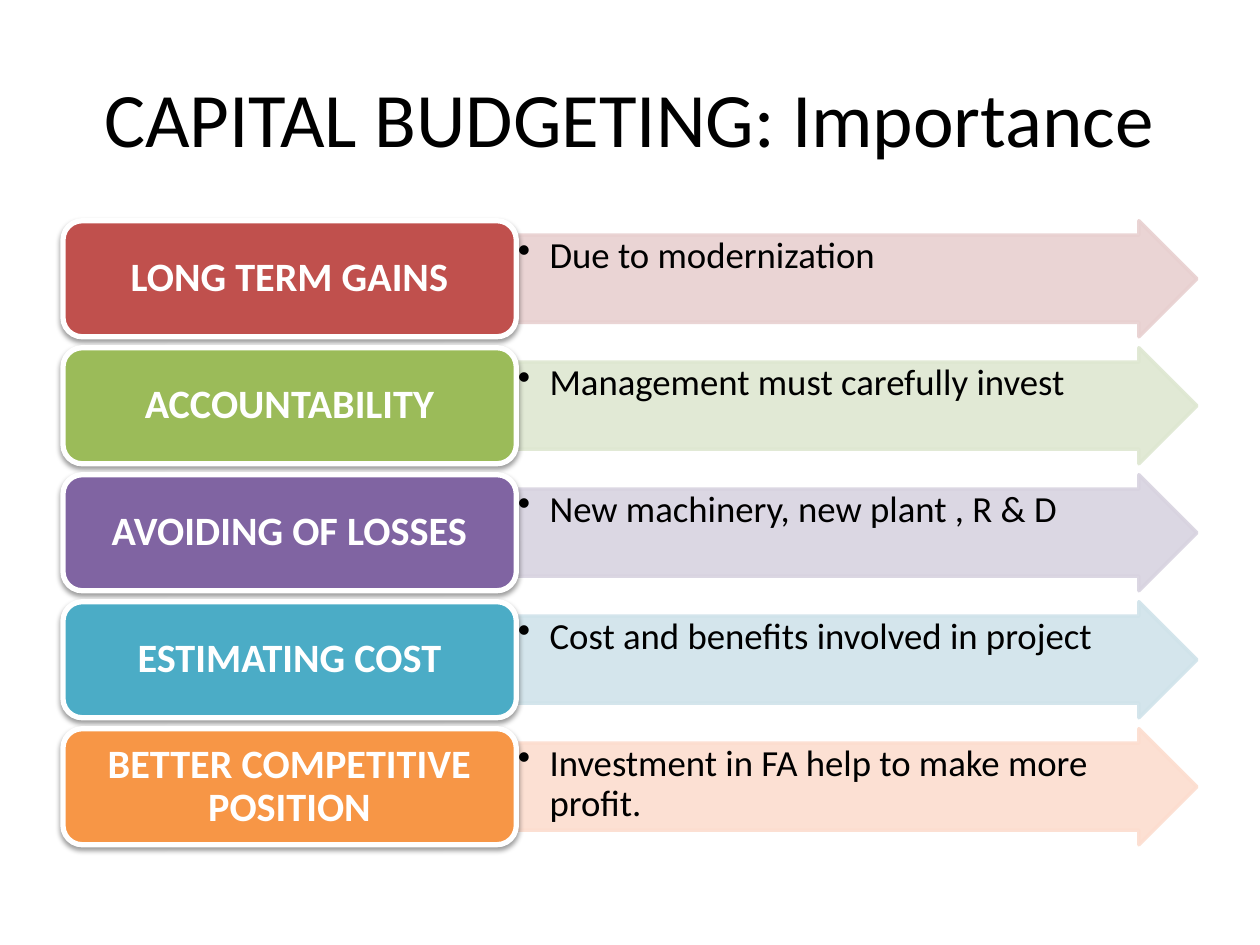
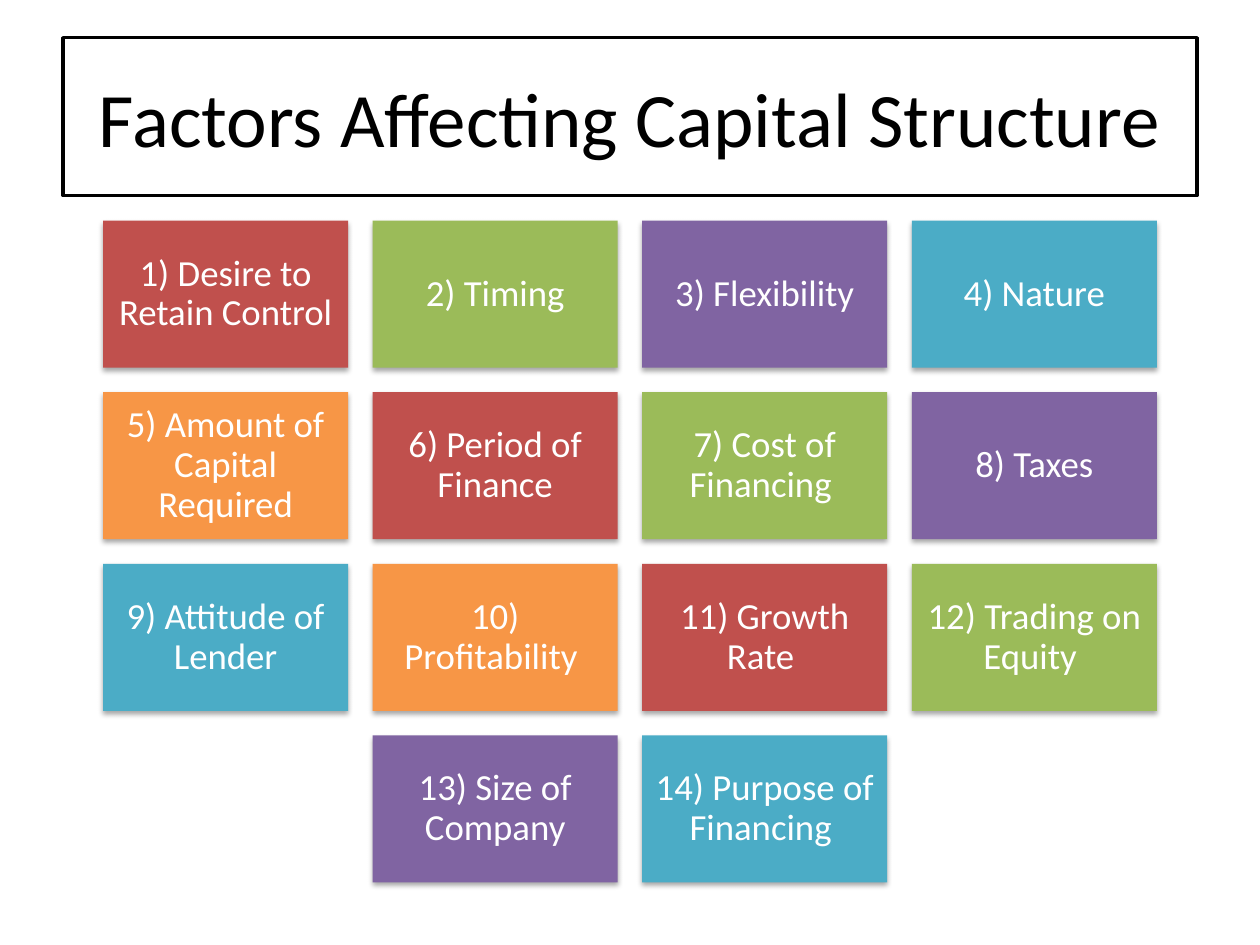
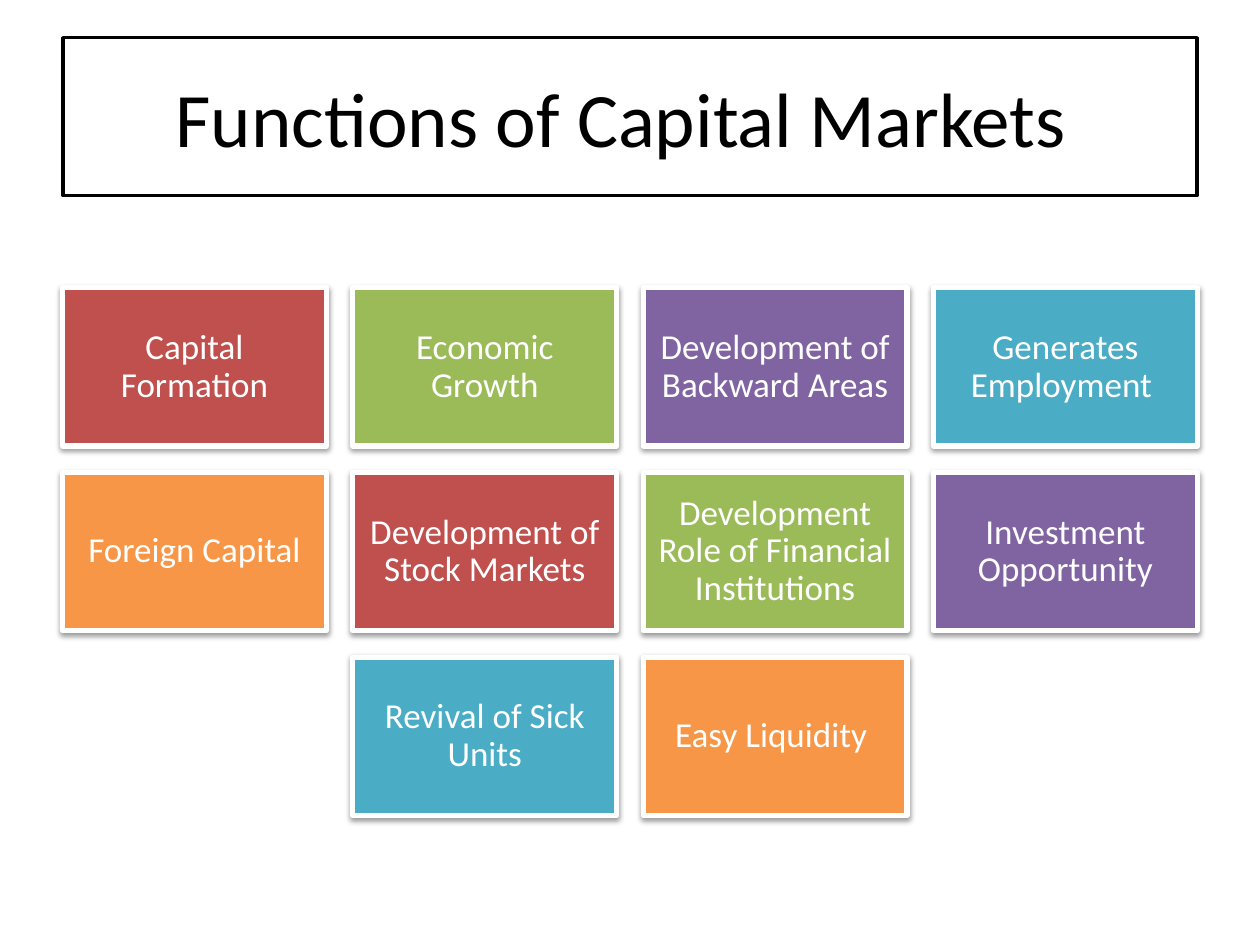
"""Build three slides on capital budgeting, capital structure and capital markets."""
from dataclasses import dataclass
from itertools import cycle

from lxml import etree
from pptx import Presentation
from pptx import util as u
from pptx.dml.color import RGBColor
from pptx.enum import shapes, text
from pptx.oxml import ns


@dataclass(frozen=True)
class Theme:
    font: str = "Calibri"
    ink: str = "000000"
    paper: str = "FFFFFF"
    hues: tuple[str, ...] = ("C0504D", "9BBB59", "8064A2", "4BACC6", "F79646")
    tints: tuple[str, ...] = ("E8D0D0", "DEE7D1", "D8D3E0", "D0E3EA", "FCDDCF")
    title: int = 44
    label: int = 23
    note: int = 21
    edge: int = 3
    frame: int = 2
    tight: float = 0.9
    clear: int = 90


@dataclass(frozen=True)
class Box:
    left: float
    top: float
    wide: float
    high: float

    def sides(self) -> tuple[u.Cm, ...]:
        return tuple(u.Cm(n) for n in (self.left, self.top, self.wide, self.high))


@dataclass(frozen=True)
class Shade:
    alpha: int
    dist: float


@dataclass(frozen=True)
class Grid:
    title: str
    items: tuple[str, ...]
    top: float
    wide: float
    size: int
    pad: float
    edge: bool
    shade: Shade


@dataclass(frozen=True)
class Row:
    label: str
    note: str


THEME = Theme()
PAGE = Box(0, 0, 25.4, 19.05)
HEAD = Box(1.27, 0.76, 22.86, 3.18)
KIND = shapes.MSO_SHAPE
COLS = 4
GAP = 0.1
RATIO = 0.6
DEEP = Shade(38, 1.6)
SOFT = Shade(35, 1.8)

ROWS = (
    Row("LONG TERM GAINS", "Due to modernization"),
    Row("ACCOUNTABILITY", "Management must carefully invest"),
    Row("AVOIDING OF LOSSES", "New machinery, new plant , R & D"),
    Row("ESTIMATING COST", "Cost and benefits involved in project"),
    Row("BETTER COMPETITIVE POSITION", "Investment in FA help to make more profit."),
)
FACTORS = Grid(
    "Factors Affecting Capital Structure",
    (
        "1) Desire to Retain Control", "2) Timing", "3) Flexibility", "4) Nature",
        "5) Amount of Capital Required", "6) Period of Finance",
        "7) Cost of Financing ", "8) Taxes",
        "9) Attitude of Lender", "10) Profitability ", "11) Growth Rate ",
        "12) Trading on Equity ",
        "13) Size of Company", "14) Purpose of Financing ",
    ),
    top=4.45, wide=4.94, size=21, pad=0.22, edge=False, shade=SOFT,
)
MARKETS = Grid(
    "Functions of Capital Markets ",
    (
        "Capital Formation", "Economic Growth", "Development of Backward Areas",
        "Generates Employment ",
        "Foreign Capital", "Development of Stock Markets",
        "Development Role of Financial Institutions", "Investment Opportunity",
        "Revival of Sick Units", "Easy Liquidity ",
    ),
    top=5.8, wide=5.32, size=20, pad=0.2, edge=True, shade=DEEP,
)


def style(para, size: int, hue: str, bold: bool = False) -> None:
    """Set the font of a paragraph."""
    font = para.font
    font.name, font.size, font.bold = THEME.font, u.Pt(size), bold
    font.color.rgb = RGBColor.from_string(hue)


def start(deck, words: str, framed: bool = True):
    """Add a slide with its title, framed or plain."""
    slide = deck.slides.add_slide(deck.slide_layouts[5])
    head = slide.shapes.title
    head.left, head.top, head.width, head.height = HEAD.sides()
    frame = head.text_frame
    frame.text = words
    frame.auto_size = text.MSO_AUTO_SIZE.NONE
    frame.vertical_anchor = text.MSO_ANCHOR.MIDDLE
    frame.paragraphs[0].alignment = text.PP_ALIGN.CENTER
    style(frame.paragraphs[0], THEME.title, THEME.ink)
    if framed:
        head.fill.solid()
        head.fill.fore_color.rgb = RGBColor.from_string(THEME.paper)
        head.line.color.rgb = RGBColor.from_string(THEME.ink)
        head.line.width = u.Pt(THEME.frame)
    return slide


def block(slide, kind, box: Box, fill: str, edge: str | None, width: int):
    """Add a filled shape without shadow."""
    shape = slide.shapes.add_shape(kind, *box.sides())
    shape.shadow.inherit = False
    shape.fill.solid()
    shape.fill.fore_color.rgb = RGBColor.from_string(fill)
    if edge:
        shape.line.color.rgb = RGBColor.from_string(edge)
        shape.line.width = u.Pt(width)
    else:
        shape.line.fill.background()
    return shape


def cast(shape, shade: Shade) -> None:
    """Give a shape a soft shadow below it."""
    effects = shape.element.spPr.find(ns.qn("a:effectLst"))
    outer = etree.SubElement(
        effects, ns.qn("a:outerShdw"), blurRad=str(u.Pt(3.1)),
        dist=str(u.Pt(shade.dist)), dir="5400000", rotWithShape="0")
    hue = etree.SubElement(outer, ns.qn("a:srgbClr"), val=THEME.ink)
    etree.SubElement(hue, ns.qn("a:alpha"), val=str(shade.alpha * 1000))


def fade(shape) -> None:
    """Make fill and line slightly clear."""
    for hue in shape.element.spPr.iter(ns.qn("a:srgbClr")):
        etree.SubElement(hue, ns.qn("a:alpha"), val=str(THEME.clear * 1000))


def write(shape, words: str, side: float, rim: float, anchor, align):
    """Put one paragraph in a shape and return it."""
    frame = shape.text_frame
    frame.word_wrap = True
    frame.margin_left = frame.margin_right = u.Cm(side)
    frame.margin_top = frame.margin_bottom = u.Cm(rim)
    frame.vertical_anchor = anchor
    frame.text = words
    para = frame.paragraphs[0]
    para.alignment = align
    para.line_spacing = THEME.tight
    return para


def centre(shape, words: str, side: float, rim: float):
    """Write centred text in a shape."""
    return write(shape, words, side, rim, text.MSO_ANCHOR.MIDDLE, text.PP_ALIGN.CENTER)


def dot(para) -> None:
    """Give a paragraph a hanging bullet."""
    props = para._p.get_or_add_pPr()
    props.set("marL", str(u.Cm(0.64)))
    props.set("indent", str(u.Cm(-0.64)))
    etree.SubElement(props, ns.qn("a:buChar"), char="•")


def arrow(slide, box: Box, words: str, tint: str) -> None:
    """Draw a pale arrow with a bulleted note."""
    shape = block(slide, KIND.RIGHT_ARROW, box, tint, tint, THEME.frame)
    shape.adjustments[0], shape.adjustments[1] = 0.75, 0.5
    fade(shape)
    para = write(shape, words, 0.03, 0.03, text.MSO_ANCHOR.TOP, text.PP_ALIGN.LEFT)
    dot(para)
    style(para, THEME.note, THEME.ink)


def label(slide, box: Box, words: str, hue: str) -> None:
    """Draw a rounded label with bold text."""
    shape = block(slide, KIND.ROUNDED_RECTANGLE, box, hue, THEME.paper, THEME.edge)
    cast(shape, DEEP)
    style(centre(shape, words, 0.25, 0.13), THEME.label, THEME.paper, True)


def draw_rows(deck) -> None:
    """Build the slide of labels and arrows."""
    slide = start(deck, "CAPITAL BUDGETING: Importance", framed=False)
    wide, high, pitch = 9.14, 2.34, 2.56
    for i, (row, hue, tint) in enumerate(zip(ROWS, THEME.hues, THEME.tints)):
        top = 4.45 + i * pitch
        arrow(slide, Box(HEAD.left + wide, top, HEAD.wide - wide, high), row.note, tint)
        label(slide, Box(HEAD.left, top, wide, high), row.label, hue)


def draw_grid(deck, grid: Grid) -> None:
    """Build a slide of tiles, each row centred."""
    slide = start(deck, grid.title)
    high, gap = grid.wide * RATIO, grid.wide * GAP
    pitch = grid.wide + gap
    edge = THEME.paper if grid.edge else None
    for i, (words, hue) in enumerate(zip(grid.items, cycle(THEME.hues))):
        row, col = divmod(i, COLS)
        count = min(COLS, len(grid.items) - row * COLS)
        left = (PAGE.wide - count * pitch + gap) / 2 + col * pitch
        box = Box(left, grid.top + row * (high + gap), grid.wide, high)
        tile = block(slide, KIND.RECTANGLE, box, hue, edge, THEME.edge)
        cast(tile, grid.shade)
        style(centre(tile, words, grid.pad, grid.pad), grid.size, THEME.paper)


def main() -> None:
    """Build and save the deck."""
    deck = Presentation()
    deck.slide_width, deck.slide_height = u.Cm(PAGE.wide), u.Cm(PAGE.high)
    draw_rows(deck)
    for grid in (FACTORS, MARKETS):
        draw_grid(deck, grid)
    deck.save("out.pptx")


if __name__ == "__main__":
    main()
